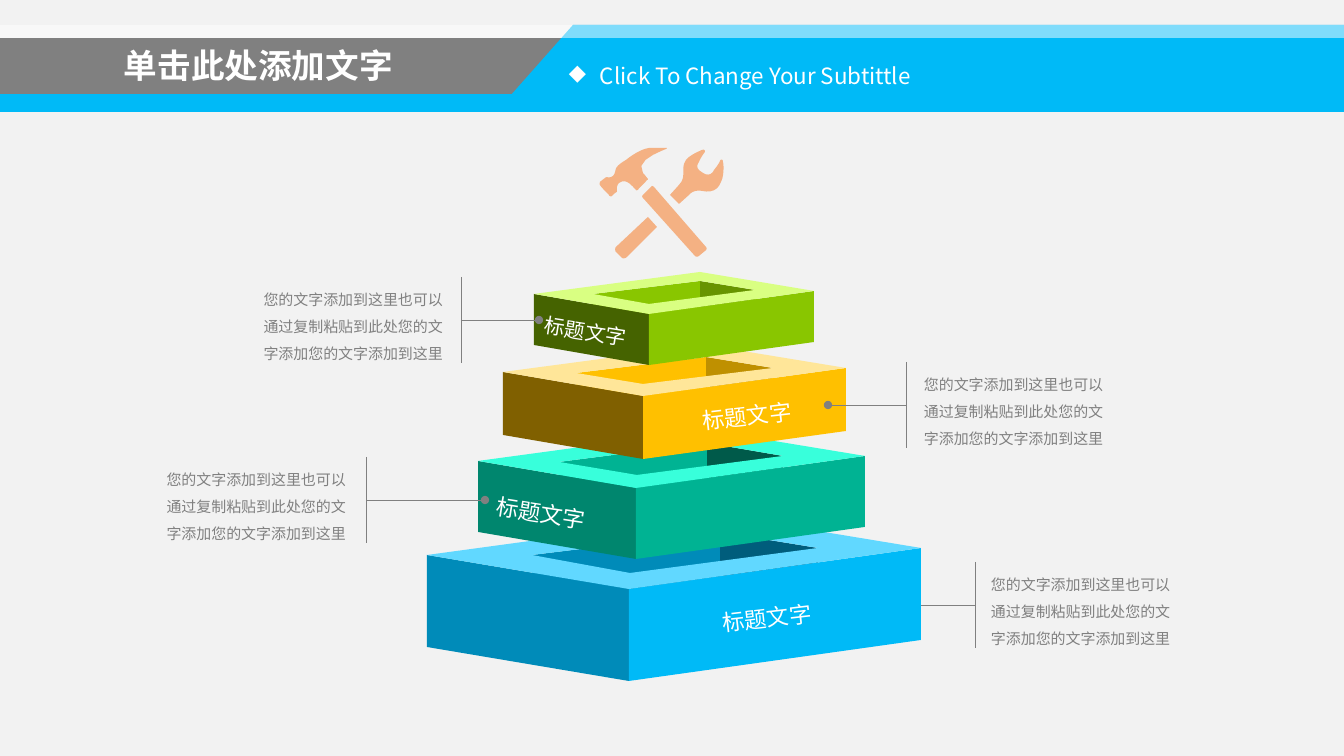
"""Build a slide with a stepped tower of four hollow blocks and a callout for each."""
from lxml.etree import SubElement
from pptx import Presentation
from pptx.dml.color import RGBColor
from pptx.enum.shapes import MSO_CONNECTOR, MSO_SHAPE
from pptx.enum.text import MSO_ANCHOR as Anchor, MSO_AUTO_SIZE as AutoSize, PP_ALIGN as Align
from pptx.oxml.ns import qn
from pptx.util import Pt

SLIDE_WIDTH, SLIDE_HEIGHT = 1344, 756
EMU_PER_PX = 12192000 / SLIDE_WIDTH
FONT, TITLE_FONT = "Noto Sans CJK SC", "Lato"

WHITE = RGBColor(0xFF, 0xFF, 0xFF)
PAPER = RGBColor(0xF2, 0xF2, 0xF2)
GRAY = RGBColor(0x80, 0x80, 0x80)
PEACH = RGBColor(0xF4, 0xB1, 0x83)
SKY = RGBColor(0x00, 0xBA, 0xF7)
SKY_LIGHT = RGBColor(0x61, 0xD8, 0xFF)
SKY_DARK = RGBColor(0x00, 0x8B, 0xB9)
SKY_DEEP = RGBColor(0x00, 0x5D, 0x7C)
TEAL = RGBColor(0x00, 0xB3, 0x93)
TEAL_LIGHT = RGBColor(0x38, 0xFF, 0xDB)
TEAL_DARK = RGBColor(0x00, 0x86, 0x6E)
TEAL_DEEP = RGBColor(0x00, 0x5A, 0x4A)
AMBER = RGBColor(0xFF, 0xC0, 0x00)
AMBER_LIGHT = RGBColor(0xFF, 0xE6, 0x99)
AMBER_DARK = RGBColor(0x80, 0x60, 0x00)
AMBER_DEEP = RGBColor(0xBF, 0x90, 0x00)
LIME = RGBColor(0x89, 0xC6, 0x00)
LIME_LIGHT = RGBColor(0xD9, 0xFF, 0x82)
LIME_DARK = RGBColor(0x45, 0x63, 0x00)
LIME_DEEP = RGBColor(0x67, 0x94, 0x00)

TITLE = "单击此处添加文字"
SUBTITLE = "Click To Change Your Subtittle"
LABEL = "标题文字"
BODY = "您的文字添加到这里也可以通过复制粘贴到此处您的文字添加您的文字添加到这里"

# Corners run back, right, front, left; colours run top, left, right, hole left, hole right.
TIERS = [
    dict(outer=[(721, 515), (921, 548), (629, 589), (427, 555)],
         hole=[(720, 532), (818, 548), (630, 573), (532, 555)], depth=92,
         colors=(SKY_LIGHT, SKY_DARK, SKY, SKY_DARK, SKY_DEEP),
         label=(711, 580, 215, 50), tilt=-6.7, size=16,
         callout=dict(bar=975, middle=605, dot=856, text_left=991, align=Align.LEFT)),
    dict(outer=[(707, 430), (865, 456), (636, 488), (478, 461)],
         hole=[(707, 443), (783, 456), (637, 475), (559, 462)], depth=71,
         colors=(TEAL_LIGHT, TEAL_DARK, TEAL, TEAL, TEAL_DEEP),
         label=(487, 484, 146, 50), tilt=8.9, size=16,
         callout=dict(bar=366, middle=500, dot=485, text_left=159, align=Align.RIGHT)),
    dict(outer=[(706, 345), (846, 368), (643, 396), (503, 372)],
         hole=[(706, 357), (773, 368), (643, 384), (576, 373)], depth=63,
         colors=(AMBER_LIGHT, AMBER_DARK, AMBER, AMBER, AMBER_DEEP),
         label=(691, 378, 215, 50), tilt=-6.7, size=16,
         callout=dict(bar=906, middle=405, dot=828, text_left=924, align=Align.LEFT)),
    dict(outer=[(700, 272), (814, 291), (649, 314), (534, 294)],
         hole=[(700, 281), (755, 290), (649, 304), (593, 294)], depth=51,
         colors=(LIME_LIGHT, LIME_DARK, LIME, LIME, LIME_DEEP),
         label=(535, 305, 146, 47), tilt=8.9, size=14.7,
         callout=dict(bar=461, middle=320, dot=539, text_left=256, align=Align.RIGHT)),
]

WRENCH_HANDLE = [(616, 247), (615, 248, 615, 251, 616, 252), (622, 258),
                 (624, 259, 626, 258, 627, 257), (657, 227), (648, 217)]
WRENCH_HEAD = [(723, 162), (723, 159, 721, 159, 720, 161), (720, 162, 716, 168, 714, 170),
               (713, 173, 709, 177, 703, 173), (694, 168, 698, 164, 699, 162),
               (700, 159, 704, 153, 705, 152), (705, 151, 705, 149, 702, 150),
               (700, 151, 686, 156, 684, 164), (682, 171, 686, 178, 679, 185),
               (670, 195), (679, 204), (689, 195), (692, 191, 698, 190, 702, 191),
               (712, 193, 718, 190, 721, 182), (724, 177, 724, 165, 723, 162)]
HAMMER_HANDLE = [(654, 187), (653, 186, 652, 186, 652, 186), (643, 195),
                 (642, 196, 642, 197, 643, 198), (695, 256), (696, 257, 698, 257, 699, 256),
                 (705, 251), (707, 250, 707, 248, 706, 247)]
HAMMER_HEAD = [(619, 183), (625, 179, 629, 182, 636, 190), (636, 191, 637, 190, 638, 190),
               (638, 189, 647, 181, 647, 180), (648, 180, 648, 179, 648, 179),
               (647, 178, 645, 175, 643, 173), (632, 158, 673, 148, 667, 148),
               (664, 148, 651, 148, 649, 148), (641, 149, 631, 156, 626, 160),
               (619, 164, 617, 167, 617, 167), (615, 169, 616, 173, 613, 176),
               (609, 179, 607, 176, 605, 178), (604, 179, 601, 181, 600, 182),
               (600, 183, 599, 184, 600, 185), (600, 186, 608, 194, 609, 195),
               (609, 196, 611, 197, 612, 196), (613, 195, 616, 192, 617, 192),
               (617, 191, 616, 186, 619, 183)]
TOOLS = [WRENCH_HANDLE, WRENCH_HEAD, HAMMER_HANDLE, HAMMER_HEAD]
CURVE_STEPS = 6
HOLE_BACK_RATIO = 0.78
BAR_HEIGHT, BODY_WIDTH, BODY_HEIGHT = 86, 187, 82


def emu(*lengths):
    return [round(length * EMU_PER_PX) for length in lengths]


def paint(shape, color):
    shape.shadow.inherit = False
    shape.fill.solid()
    shape.fill.fore_color.rgb = color
    shape.line.fill.background()
    return shape


def add_band(slide, top, height, color):
    box = emu(0, top, SLIDE_WIDTH, height)
    return paint(slide.shapes.add_shape(MSO_SHAPE.RECTANGLE, *box), color)


def add_outline(slide, contours, color):
    builder = slide.shapes.build_freeform(*emu(*contours[0][0]), scale=1.0)
    for index, contour in enumerate(contours):
        if index:
            builder.move_to(*emu(*contour[0]))
        builder.add_line_segments([emu(*point) for point in contour[1:]], close=True)
    return paint(builder.convert_to_shape(), color)


def flatten(segments):
    points = [segments[0]]
    for segment in segments[1:]:
        if len(segment) == 2:
            points.append(segment)
            continue
        controls = [points[-1], segment[:2], segment[2:4], segment[4:]]
        for step in range(1, CURVE_STEPS + 1):
            t = step / CURVE_STEPS
            weights = ((1 - t) ** 3, 3 * t * (1 - t) ** 2, 3 * t * t * (1 - t), t ** 3)
            points.append(tuple(sum(w * p[axis] for w, p in zip(weights, controls))
                                for axis in (0, 1)))
    return points


def add_text(slide, text, box, size, color=WHITE, font=FONT, bold=False, align=Align.LEFT,
             anchor=Anchor.TOP, insets=(10, 5), spacing=1.0, tilt=0, grow=True):
    shape = slide.shapes.add_textbox(*emu(*box))
    shape.rotation = tilt
    frame = shape.text_frame
    frame.word_wrap = True
    frame.auto_size = AutoSize.SHAPE_TO_FIT_TEXT if grow else AutoSize.NONE
    frame.vertical_anchor = anchor
    frame.margin_left = frame.margin_right = emu(insets[0])[0]
    frame.margin_top = frame.margin_bottom = emu(insets[1])[0]
    paragraph = frame.paragraphs[0]
    paragraph.alignment, paragraph.line_spacing = align, spacing
    run = paragraph.add_run()
    run.text = text
    run.font.size, run.font.bold, run.font.name = Pt(size), bold, font
    run.font.color.rgb = color
    SubElement(run.font._element, qn("a:ea"), typeface=FONT)
    return paragraph


def add_line(slide, start, end, dot=False):
    line = slide.shapes.add_connector(MSO_CONNECTOR.STRAIGHT, *emu(*start, *end))
    line.line.color.rgb = GRAY
    line.line.width = Pt(0.5)
    properties = line._element.spPr
    if dot:
        SubElement(properties.find(qn("a:ln")), qn("a:tailEnd"), type="oval")
    SubElement(properties, qn("a:effectLst"))


def add_callout(slide, bar, middle, dot, text_left, align):
    half = BAR_HEIGHT // 2
    add_line(slide, (bar, middle - half), (bar, middle + half))
    add_line(slide, (bar, middle), (dot, middle), dot=True)
    add_text(slide, BODY, (text_left, middle - 38, BODY_WIDTH, BODY_HEIGHT), 10.7,
             color=GRAY, align=align, insets=(0, 0), spacing=1.5)


def add_wall(slide, start, end, start_depth, end_depth, color):
    lower = [(end[0], end[1] + end_depth), (start[0], start[1] + start_depth)]
    add_outline(slide, [[start, end, *lower]], color)


def add_tier(slide, tier):
    outer, hole, depth = tier["outer"], tier["hole"], tier["depth"]
    top, left_side, right_side, hole_left, hole_right = tier["colors"]
    back_depth = depth * HOLE_BACK_RATIO
    add_wall(slide, hole[0], hole[1], back_depth, depth, hole_right)
    add_wall(slide, hole[0], hole[3], back_depth, depth, hole_left)
    add_wall(slide, outer[3], outer[2], depth, depth, left_side)
    add_wall(slide, outer[2], outer[1], depth, depth, right_side)
    add_outline(slide, [outer, hole[::-1]], top)
    add_text(slide, LABEL, tier["label"], tier["size"], anchor=Anchor.MIDDLE,
             spacing=1.5, tilt=tier["tilt"])


def add_header(slide):
    add_band(slide, 56, 56, SKY)
    add_band(slide, 38, 56, GRAY)
    add_outline(slide, [[(573, 25), (SLIDE_WIDTH, 25), (SLIDE_WIDTH, 112), (496, 112)]], SKY)
    strip = add_band(slide, 25, 13, WHITE)
    color = strip._element.spPr.find(qn("a:solidFill")).find(qn("a:srgbClr"))
    SubElement(color, qn("a:alpha"), val="50000")
    add_text(slide, TITLE, (117, 42, 380, 47), 24, font=TITLE_FONT, bold=True, insets=(7, 3))
    paragraph = add_text(slide, SUBTITLE, (553, 51, 642, 46), 16, insets=(16, 8),
                         spacing=1.1, grow=False)
    paragraph.space_before = Pt(3.2)
    properties = paragraph._element.get_or_add_pPr()
    indent = emu(31)[0]
    properties.set("marL", str(indent))
    properties.set("indent", str(-indent))
    SubElement(properties, qn("a:buChar"), char="◆")


def main():
    presentation = Presentation()
    presentation.slide_width, presentation.slide_height = emu(SLIDE_WIDTH, SLIDE_HEIGHT)
    slide = presentation.slides.add_slide(presentation.slide_layouts[6])
    slide.background.fill.solid()
    slide.background.fill.fore_color.rgb = PAPER
    add_header(slide)
    for index, tier in enumerate(TIERS):
        steps = [lambda: add_tier(slide, tier), lambda: add_callout(slide, **tier["callout"])]
        for step in steps if index else reversed(steps):
            step()
    add_outline(slide, [flatten(tool) for tool in TOOLS], PEACH)
    presentation.save("out.pptx")


if __name__ == "__main__":
    main()
